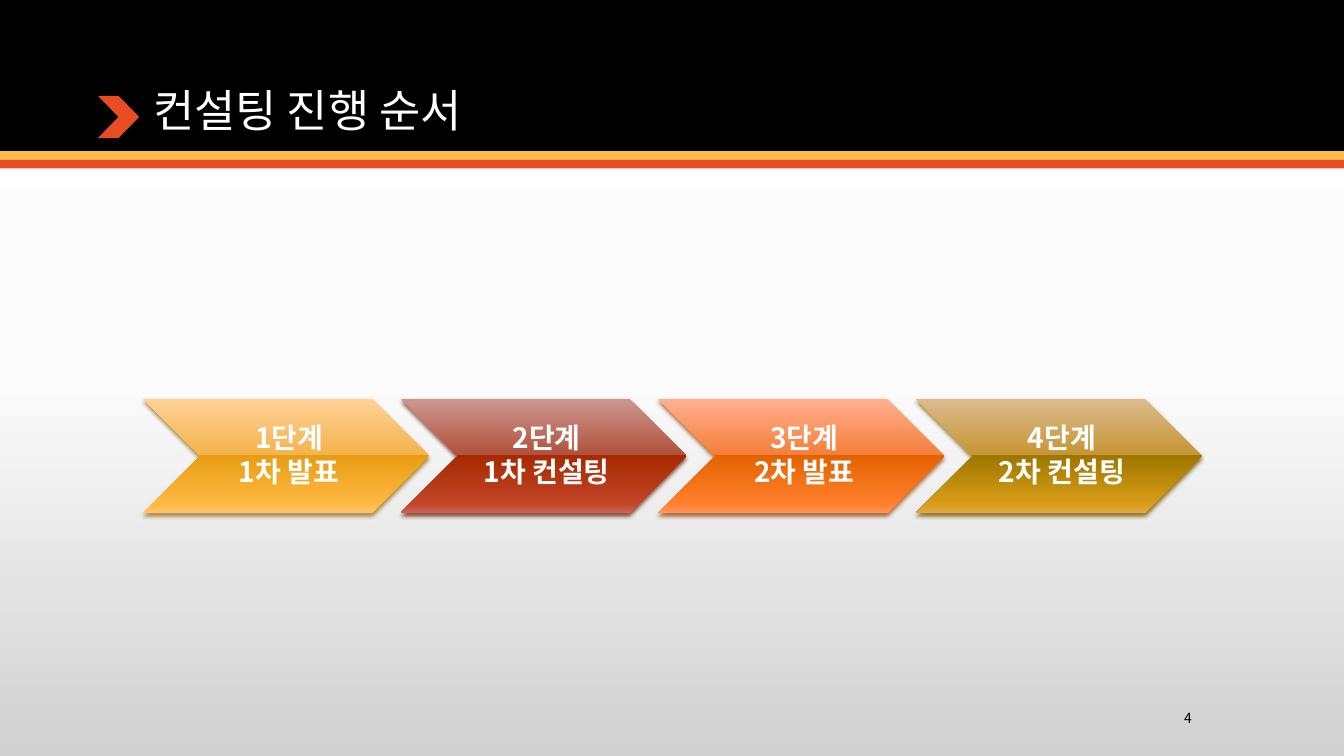
from lxml.etree import SubElement
from pptx import Presentation
from pptx.dml.color import RGBColor
from pptx.enum.shapes import MSO_SHAPE
from pptx.enum.text import MSO_ANCHOR, PP_ALIGN
from pptx.oxml.ns import qn
from pptx.util import Inches, Pt

TITLE = "컨설팅 진행 순서"
PAGE_NUMBER = "4"
FONT = "Noto Sans CJK KR"
COLORS = {"black": "000000", "white": "FFFFFF", "gold": "FFBD47", "orange": "E84C22"}
BACKGROUND = [(0, "FFFFFF"), (50, "FBFBFB"), (100, "D1D1D1")]
STOPS = (0, 49, 49, 92, 100)
STEPS = [
    (("1단계", "1차 발표"), ("FFD197", "F4B44C", "E89C13", "FFB942", "FFC36A"), "9D752C"),
    (("2단계", "1차 컨설팅"), ("CC9790", "B1513C", "A82A02", "C14526", "C96654"), "702D17"),
    (("3단계", "2차 발표"), ("FFAF90", "F57F39", "E36200", "FF802C", "FF945E"), "9D5218"),
    (("4단계", "2차 컨설팅"), ("DBBB8E", "C69534", "9D7600", "D99D17", "DFA94C"), "7E5E00"),
]

WIDTH, HEIGHT = 13.33, 7.5
HEADER = HEIGHT / 5
STRIPE = 0.085
LEFT, CONTENT = 1.42, 10.5
STEP_HEIGHT = 1.13
STEP_WIDTH = STEP_HEIGHT * 2.51
STEP_PITCH = (CONTENT - STEP_WIDTH) / (len(STEPS) - 1)
STEP_TOP = 3.96


def add_color(parent, value):
    return SubElement(parent, qn("a:srgbClr"), val=value)


def apply_gradient(fill, element, stops):
    fill.gradient()
    fill.gradient_angle = 270
    stop_list = next(element.iter(qn("a:gsLst")))
    for stop in list(stop_list):
        stop_list.remove(stop)
    for position, color in stops:
        add_color(SubElement(stop_list, qn("a:gs"), pos=str(position * 1000)), color)


def add_shadow(shape, color):
    effects = next(shape.element.iter(qn("a:effectLst")))
    shadow = SubElement(effects, qn("a:outerShdw"), blurRad=str(Pt(3.1)),
                        dist=str(Pt(2)), dir="5400000", rotWithShape="0")
    SubElement(add_color(shadow, color), qn("a:alpha"), val="83000")


def add_block(slide, kind, area, color=None):
    shape = slide.shapes.add_shape(kind, *map(Inches, area))
    shape.shadow.inherit = False
    shape.line.fill.background()
    if color:
        shape.fill.solid()
        shape.fill.fore_color.rgb = RGBColor.from_string(COLORS[color])
    return shape


def write(frame, lines, size, color, anchor, align, bold=False, spacing=1.0, after=0):
    frame.text = "\n".join(lines)
    frame.word_wrap = True
    frame.vertical_anchor = anchor
    for para in frame.paragraphs:
        para.alignment = align
        para.line_spacing = spacing
        para.space_after = Pt(after)
        for span in para.runs:
            span.font.size = Pt(size)
            span.font.bold = bold
            span.font.name = FONT
            span.font.color.rgb = RGBColor.from_string(COLORS[color])
            SubElement(span.font._element, qn("a:ea"), typeface=FONT)


def add_header(slide):
    add_block(slide, MSO_SHAPE.RECTANGLE, (0, 0, WIDTH, HEADER), "black")
    for row, color in enumerate(("gold", "orange")):
        add_block(slide, MSO_SHAPE.RECTANGLE, (0, HEADER + row * STRIPE, WIDTH, STRIPE), color)
    add_block(slide, MSO_SHAPE.CHEVRON, (0.97, 0.95, 0.41, 0.42), "orange")
    title = slide.shapes.add_textbox(*map(Inches, (LEFT, 0.28, CONTENT, 1.13)))
    write(title.text_frame, [TITLE], 32, "white", MSO_ANCHOR.BOTTOM, PP_ALIGN.LEFT, spacing=0.9)


def add_steps(slide):
    for column, (lines, colors, shadow) in enumerate(STEPS):
        area = (LEFT + column * STEP_PITCH, STEP_TOP, STEP_WIDTH, STEP_HEIGHT)
        step = add_block(slide, MSO_SHAPE.CHEVRON, area)
        apply_gradient(step.fill, step.element, zip(STOPS, colors))
        add_shadow(step, shadow)
        frame = step.text_frame
        frame.margin_left = Inches(0.09)
        frame.margin_right = frame.margin_top = frame.margin_bottom = Inches(0.03)
        write(frame, lines, 20, "white", MSO_ANCHOR.MIDDLE, PP_ALIGN.CENTER,
              bold=True, spacing=0.9, after=2.5)


def main():
    deck = Presentation()
    deck.slide_width, deck.slide_height = Inches(WIDTH), Inches(HEIGHT)
    slide = deck.slides.add_slide(deck.slide_layouts[6])
    apply_gradient(slide.background.fill, slide.element, BACKGROUND)
    add_header(slide)
    add_steps(slide)
    page = slide.shapes.add_textbox(*map(Inches, (LEFT + CONTENT - 1.5, 6.97, 1.5, 0.3)))
    write(page.text_frame, [PAGE_NUMBER], 10, "black", MSO_ANCHOR.MIDDLE, PP_ALIGN.RIGHT)
    deck.save("out.pptx")


if __name__ == "__main__":
    main()
